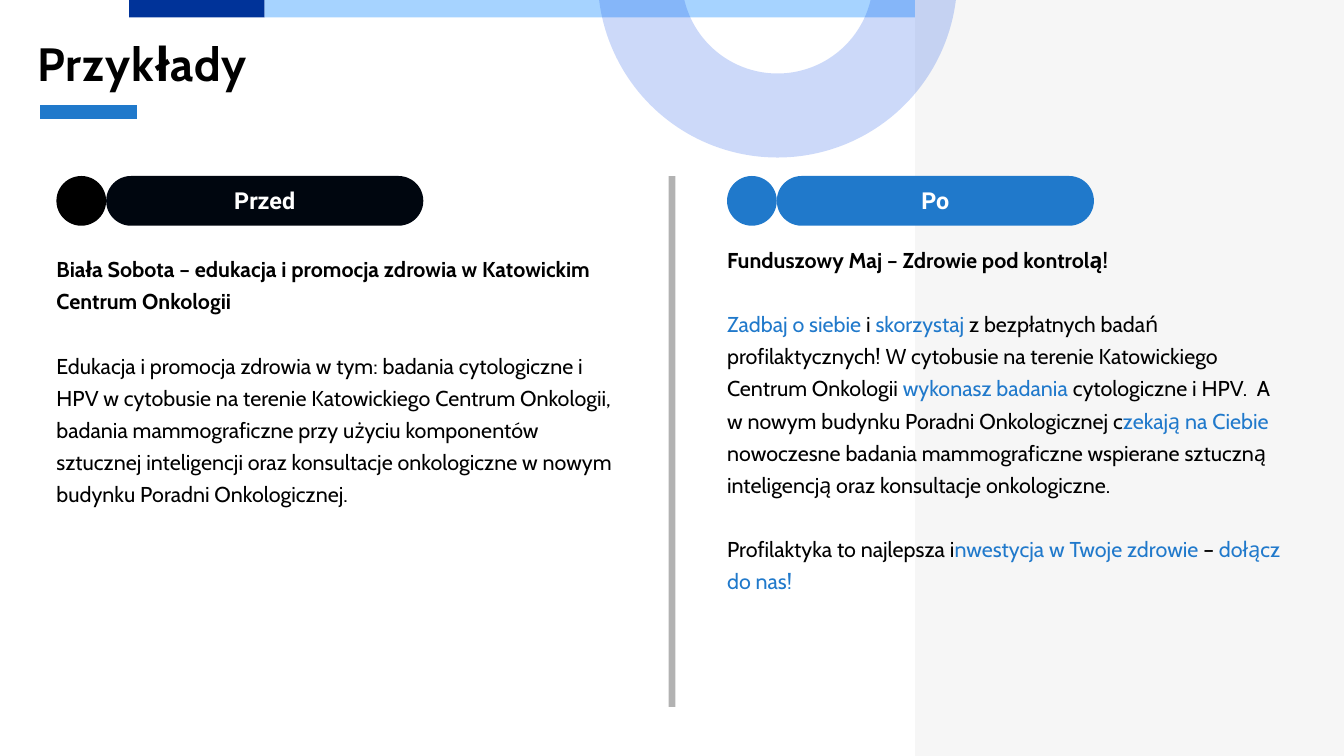
import pptx
import pptx.util
import pptx.dml.color
import pptx.enum.shapes
import pptx.enum.text
import pptx.oxml
import pptx.oxml.ns
from lxml import etree

Inches, Pt = pptx.util.Inches, pptx.util.Pt
RGBColor = pptx.dml.color.RGBColor
SHAPE = pptx.enum.shapes.MSO_SHAPE
ALIGN = pptx.enum.text.PP_ALIGN
ANCHOR = pptx.enum.text.MSO_ANCHOR
qn = pptx.oxml.ns.qn

BLACK = RGBColor(0x00, 0x00, 0x00)
WHITE = RGBColor(0xFF, 0xFF, 0xFF)
INK = RGBColor(0x00, 0x06, 0x0F)
BLUE = RGBColor(0x20, 0x79, 0xCB)
NAVY = RGBColor(0x00, 0x33, 0x99)
SKY = RGBColor(0xA6, 0xD3, 0xFF)
PANEL = RGBColor(0xF6, 0xF6, 0xF6)
RING = RGBColor(0x03, 0x45, 0xE4)

TITLE = "Przykłady"
COLUMNS = [
    {
        "label": "Przed", "dot": BLACK, "pill": INK, "text_top": 1.86, "text_height": 2.12,
        "heading": "Biała Sobota – edukacja i promocja zdrowia w Katowickim Centrum Onkologii",
        "heading_align": ALIGN.LEFT,
        "paragraphs": [
            [("Edukacja i promocja zdrowia w tym: badania cytologiczne i HPV w cytobusie "
              "na terenie Katowickiego Centrum Onkologii, badania mammograficzne przy użyciu "
              "komponentów sztucznej inteligencji oraz konsultacje onkologiczne w nowym "
              "budynku Poradni Onkologicznej.", BLACK)],
        ],
    },
    {
        "label": "Po", "dot": BLUE, "pill": BLUE, "text_top": 1.79, "text_height": 2.84,
        "heading": "Funduszowy Maj – Zdrowie pod kontrolą!",
        "heading_align": ALIGN.JUSTIFY,
        "paragraphs": [
            [("Zadbaj o siebie ", BLUE), ("i ", BLACK), ("skorzystaj", BLUE),
             (" z bezpłatnych badań profilaktycznych! W cytobusie na terenie "
              "Katowickiego Centrum Onkologii ", BLACK),
             ("wykonasz badania", BLUE),
             (" cytologiczne i HPV.  A w nowym budynku Poradni Onkologicznej c", BLACK),
             ("zekają na Ciebie", BLUE),
             (" nowoczesne badania mammograficzne wspierane sztuczną inteligencją "
              "oraz konsultacje onkologiczne.", BLACK)],
            [("Profilaktyka to najlepsza i", BLACK), ("nwestycja w Twoje zdrowie", BLUE),
             (" – ", BLACK), ("dołącz do nas!", BLUE)],
        ],
    },
]

WIDTH = 10
HEIGHT = WIDTH * 9 / 16
PANEL_LEFT = 6.81
COLUMN_LEFT, COLUMN_STEP, COLUMN_WIDTH = 0.42, 4.99, 4.17
LABEL_TOP, DOT, PILL_WIDTH = 1.31, 0.37, 2.36
BODY_LEADING = Pt(17.2)

deck = pptx.Presentation()
deck.slide_width, deck.slide_height = Inches(WIDTH), Inches(HEIGHT)
slide = deck.slides.add_slide(deck.slide_layouts[3])
title, *bodies = slide.placeholders


def box(*lengths):
    return [Inches(length) for length in lengths]


def add_filled(kind, area, color):
    shape = slide.shapes.add_shape(kind, *box(*area))
    shape.shadow.inherit = False
    shape.fill.solid()
    shape.fill.fore_color.rgb = color
    shape.line.fill.background()
    return shape


def style_line(line, color, width, opacity=100):
    line.color.rgb = color
    line.width = Pt(width)
    for srgb in line.fill._xPr.iter(qn("a:srgbClr")):
        etree.SubElement(srgb, qn("a:alpha")).set("val", str(opacity * 1000))


def add_line(start, end, color, width, opacity=100):
    connector = slide.shapes.add_connector(
        pptx.enum.shapes.MSO_CONNECTOR.STRAIGHT, *box(*start, *end))
    style_line(connector.line, color, width, opacity)
    etree.SubElement(connector.element.spPr, qn("a:effectLst"))


def place_text(holder, area):
    holder.left, holder.top, holder.width, holder.height = box(*area)
    holder.element.getparent().append(holder.element)
    frame = holder.text_frame
    frame.word_wrap = True
    frame.auto_size = pptx.enum.text.MSO_AUTO_SIZE.NONE
    frame.vertical_anchor = ANCHOR.TOP
    frame.margin_left = frame.margin_right = frame.margin_top = frame.margin_bottom = 0
    return frame


def format_paragraph(paragraph, font, size, bold, leading, align=ALIGN.LEFT, before=0):
    paragraph.alignment = align
    paragraph.line_spacing = leading
    paragraph.space_before = before
    paragraph.space_after = 0
    properties = paragraph._p.get_or_add_pPr()
    properties.set("marL", "0")
    properties.set("indent", "0")
    etree.SubElement(properties, qn("a:buNone"))
    paragraph.font.name = font
    paragraph.font.size = Pt(size)
    paragraph.font.bold = bold


add_filled(SHAPE.RECTANGLE, (0.96, 0, 1.01, 0.13), NAVY)
add_filled(SHAPE.RECTANGLE, (1.97, 0, PANEL_LEFT - 1.97, 0.13), SKY)
add_filled(SHAPE.RECTANGLE, (PANEL_LEFT, 0, WIDTH - PANEL_LEFT, HEIGHT), PANEL)
add_line((WIDTH / 2, LABEL_TOP), (WIDTH / 2, 5.26), BLACK, 3.75, 30)
add_line((0.3, 0.83), (1.02, 0.83), BLUE, 7.5)

heading_frame = place_text(title, (0.28, 0.19, 5.89, 0.45))
heading_frame.text = TITLE
title_line = heading_frame.paragraphs[0]
format_paragraph(title_line, "Cabin", 25, True, Pt(35))
title_line.font.color.rgb = BLACK
title_line.runs[0]._r.get_or_add_rPr().set("spc", "50")

for index, (column, body) in enumerate(zip(COLUMNS, bodies)):
    left = COLUMN_LEFT + index * COLUMN_STEP
    add_filled(SHAPE.OVAL, (left, LABEL_TOP, DOT, DOT), column["dot"])
    pill = add_filled(SHAPE.ROUNDED_RECTANGLE,
                      (left + DOT, LABEL_TOP, PILL_WIDTH, DOT), column["pill"])
    pill.adjustments[0] = 0.5
    label_frame = pill.text_frame
    label_frame.margin_top, label_frame.margin_bottom = box(0, 0.04)
    label_frame.vertical_anchor = ANCHOR.MIDDLE
    label_frame.text = column["label"]
    label = label_frame.paragraphs[0]
    format_paragraph(label, "Roboto", 12.5, True, Pt(17.5), ALIGN.CENTER)
    label.font.color.rgb = WHITE

    frame = place_text(body, (left, column["text_top"], COLUMN_WIDTH, column["text_height"]))
    for row, runs in enumerate([[(column["heading"], BLACK)], *column["paragraphs"]]):
        paragraph = frame.add_paragraph() if row else frame.paragraphs[0]
        format_paragraph(paragraph, "Cabin", 11.5, row == 0, BODY_LEADING,
                         ALIGN.LEFT if row else column["heading_align"],
                         BODY_LEADING if row else 0)
        for text, color in runs:
            run = paragraph.add_run()
            run.text = text
            run.font.color.rgb = color

ring = slide.shapes.add_shape(SHAPE.OVAL, *box(4.76, -1.19, 2.05, 2.05))
ring.shadow.inherit = False
ring.fill.background()
style_line(ring.line, RING, 45, 20)

deck.save("out.pptx")
